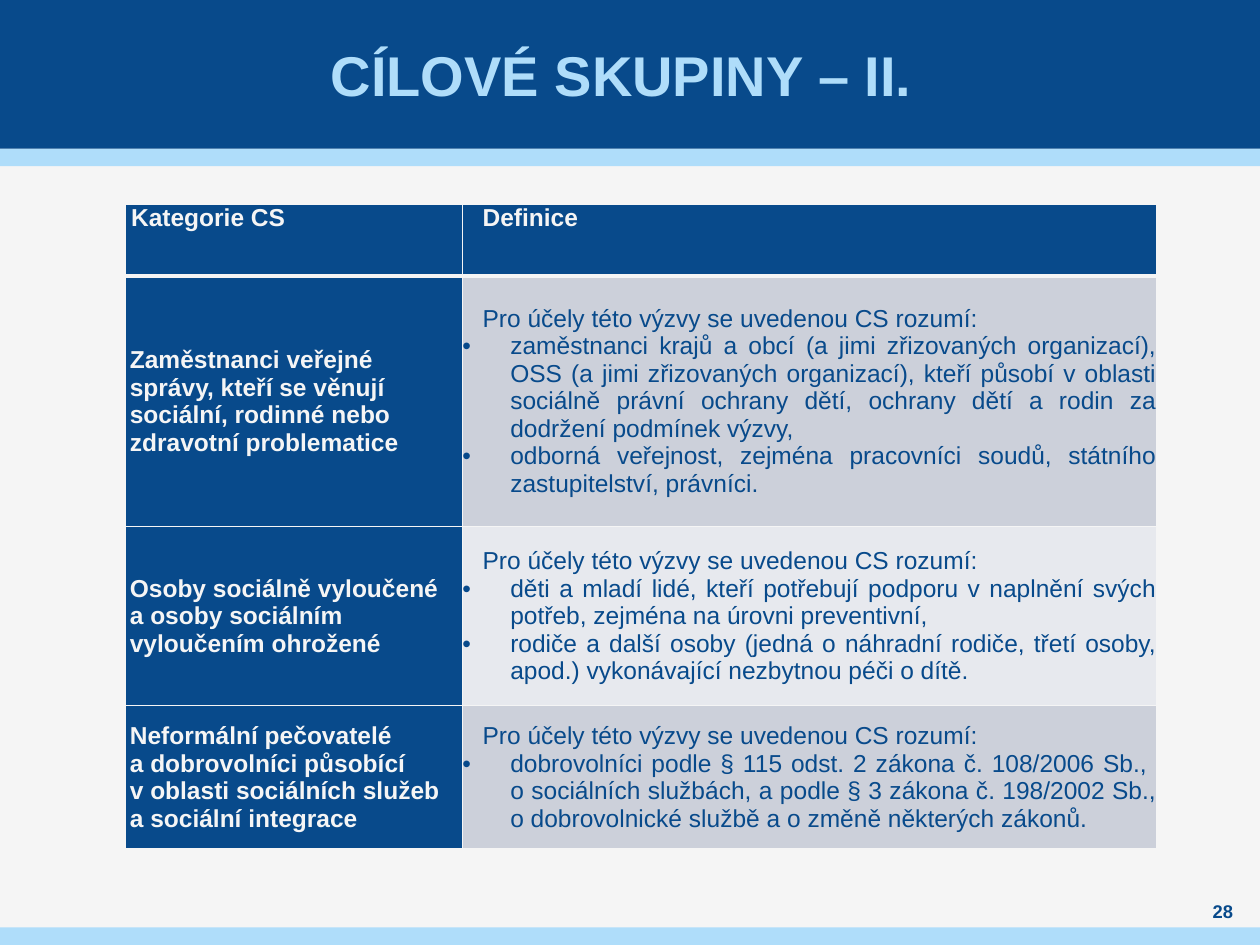
from dataclasses import dataclass

from lxml import etree
from pptx import Presentation
from pptx.dml.color import RGBColor
from pptx.enum.shapes import MSO_SHAPE
from pptx.enum.text import MSO_ANCHOR, PP_ALIGN
from pptx.oxml.ns import qn
from pptx.util import Inches, Pt

RECT = MSO_SHAPE.RECTANGLE
TOP, MIDDLE = MSO_ANCHOR.TOP, MSO_ANCHOR.MIDDLE
LEFT, CENTER, JUSTIFY = PP_ALIGN.LEFT, PP_ALIGN.CENTER, PP_ALIGN.JUSTIFY
MARGINS = ("margin_left", "margin_top", "margin_right", "margin_bottom")


@dataclass(frozen=True)
class Theme:
    font: str = "Arial"
    navy: str = "084A8B"
    sky: str = "AFDDFA"
    paper: str = "F5F5F5"
    bands: tuple = ("CCD0DA", "E7E9EE")
    title_size: float = 32
    body_size: float = 14
    number_size: float = 10.5
    rule: float = 1
    header_rule: float = 3


THEME = Theme()
WIDTH, HEIGHT = 10, 7.5
HEADER_HEIGHT, STRIPE_HEIGHT = 1.18, 0.14
COLUMN_WIDTHS = (2.68, 5.51)
ROW_HEIGHTS = (0.57, 1.99, 1.42, 1.14)
HEADINGS = (("Kategorie CS", 0.05), ("Definice", 0.16))
CATEGORY_INDENT, INTRO_INDENT, BULLET_INDENT = 0.04, 0.16, 0.38
INTRO = "Pro účely této výzvy se uvedenou CS rozumí:"
GROUPS = (
    (
        ("Zaměstnanci veřejné správy, kteří se věnují sociální, rodinné nebo "
         "zdravotní problematice",),
        ("zaměstnanci krajů a obcí (a jimi zřizovaných organizací), OSS (a jimi "
         "zřizovaných organizací), kteří působí v oblasti sociálně právní ochrany "
         "dětí, ochrany dětí a rodin za dodržení podmínek výzvy,",
         "odborná veřejnost, zejména pracovníci soudů, státního zastupitelství, "
         "právníci."),
    ),
    (
        ("Osoby sociálně vyloučené", "a osoby sociálním vyloučením ohrožené"),
        ("děti a mladí lidé, kteří potřebují podporu v naplnění svých potřeb, "
         "zejména na úrovni preventivní,",
         "rodiče a další osoby (jedná o náhradní rodiče, třetí osoby, apod.) "
         "vykonávající nezbytnou péči o dítě."),
    ),
    (
        ("Neformální pečovatelé", "a dobrovolníci působící",
         "v oblasti sociálních služeb", "a sociální integrace"),
        ("dobrovolníci podle § 115 odst. 2 zákona č. 108/2006 Sb., \v"
         "o sociálních službách, a podle § 3 zákona č. 198/2002 Sb., "
         "o dobrovolnické službě a o změně některých zákonů.",),
    ),
)


def paint(fill, color):
    fill.solid()
    fill.fore_color.rgb = RGBColor.from_string(color)


def write(paragraph, text, size, color, bold=True, align=LEFT, indent=0, bullet=False):
    paragraph.text = text
    paragraph.alignment = align
    properties = paragraph._p.get_or_add_pPr()
    properties.set("marL", str(Inches(indent)))
    properties.set("indent", str(Inches(-indent if bullet else 0)))
    if bullet:
        etree.SubElement(properties, qn("a:buFont"), typeface=THEME.font)
        etree.SubElement(properties, qn("a:buChar"), char="•")
    for run in paragraph.runs:
        for name, value in {"name": THEME.font, "size": Pt(size), "bold": bold}.items():
            setattr(run.font, name, value)
        run.font.color.rgb = RGBColor.from_string(color)
    for line_break in paragraph._p.findall(qn("a:br")):
        etree.SubElement(line_break, qn("a:rPr"), sz=str(Pt(size).centipoints))


def add_band(slide, box, color):
    band = slide.shapes.add_shape(RECT, *map(Inches, box))
    band.shadow.inherit = False
    paint(band.fill, color)
    band.line.fill.background()


def add_label(slide, box, text, size, color, side_margin=0):
    frame = slide.shapes.add_textbox(*map(Inches, box)).text_frame
    frame.word_wrap = True
    frame.vertical_anchor = MIDDLE
    for name, value in zip(MARGINS, (side_margin, 0, side_margin, 0)):
        setattr(frame, name, Inches(value))
    write(frame.paragraphs[0], text, size, color, align=CENTER)


def add_header(slide, box):
    left, top, width, height = box
    add_band(slide, (left, top + height, width, STRIPE_HEIGHT), THEME.sky)
    add_band(slide, box, THEME.navy)
    add_label(slide, (left + 0.39, top, 9.21, height), "CÍLOVÉ SKUPINY – II. ",
              THEME.title_size, THEME.sky, side_margin=0.04)


def add_footer(slide, box):
    left, top, width, _ = box
    add_band(slide, box, THEME.sky)
    add_label(slide, (left + width - 0.55, top - 0.23, 0.51, 0.2), "28",
              THEME.number_size, THEME.navy)


def rule_cell(cell, top, bottom):
    properties = cell._tc.get_or_add_tcPr()
    widths = {"L": THEME.rule, "R": THEME.rule, "T": top, "B": bottom}
    for side, points in widths.items():
        line = etree.SubElement(properties, qn(f"a:ln{side}"), w=str(Pt(points)))
        solid = etree.SubElement(line, qn("a:solidFill"))
        etree.SubElement(solid, qn("a:srgbClr"), val=THEME.paper)


def fill_cell(cell, row, color, paragraphs):
    """Style one cell; each paragraph is a dict of arguments for write()."""
    rule_cell(cell,
              THEME.header_rule if row == 1 else THEME.rule,
              THEME.header_rule if row == 0 else THEME.rule)
    paint(cell.fill, color)
    cell.vertical_anchor = MIDDLE if row else TOP
    for name in MARGINS:
        setattr(cell, name, 0)
    frame = cell.text_frame
    for index, content in enumerate(paragraphs):
        paragraph = frame.add_paragraph() if index else frame.paragraphs[0]
        write(paragraph, size=THEME.body_size, **content)


def add_groups_table(slide, box):
    table = slide.shapes.add_table(
        len(ROW_HEIGHTS), len(COLUMN_WIDTHS), *map(Inches, box)).table
    for column, share in zip(table.columns, COLUMN_WIDTHS):
        column.width = Inches(box[2] * share / sum(COLUMN_WIDTHS))
    for row, share in zip(table.rows, ROW_HEIGHTS):
        row.height = Inches(box[3] * share / sum(ROW_HEIGHTS))

    for column, (heading, indent) in enumerate(HEADINGS):
        fill_cell(table.cell(0, column), 0, THEME.navy,
                  [dict(text=heading, color=THEME.paper, indent=indent)])
    for row, (category, definitions) in enumerate(GROUPS, start=1):
        fill_cell(table.cell(row, 0), row, THEME.navy,
                  [dict(text=line, color=THEME.paper, indent=CATEGORY_INDENT)
                   for line in category])
        body = dict(color=THEME.navy, bold=False, align=JUSTIFY)
        intro = dict(body, text=INTRO, indent=INTRO_INDENT)
        points = [dict(body, text=definition, indent=BULLET_INDENT, bullet=True)
                  for definition in definitions]
        fill_cell(table.cell(row, 1), row, THEME.bands[(row - 1) % 2], [intro, *points])


def main():
    deck = Presentation()
    deck.slide_width, deck.slide_height = Inches(WIDTH), Inches(HEIGHT)
    slide = deck.slides.add_slide(deck.slide_layouts[6])
    paint(slide.background.fill, THEME.paper)
    add_header(slide, (0, 0, WIDTH, HEADER_HEIGHT))
    add_groups_table(slide, (0.99, 1.62, sum(COLUMN_WIDTHS), sum(ROW_HEIGHTS)))
    add_footer(slide, (0, HEIGHT - STRIPE_HEIGHT, WIDTH, STRIPE_HEIGHT))
    deck.save("out.pptx")


if __name__ == "__main__":
    main()
